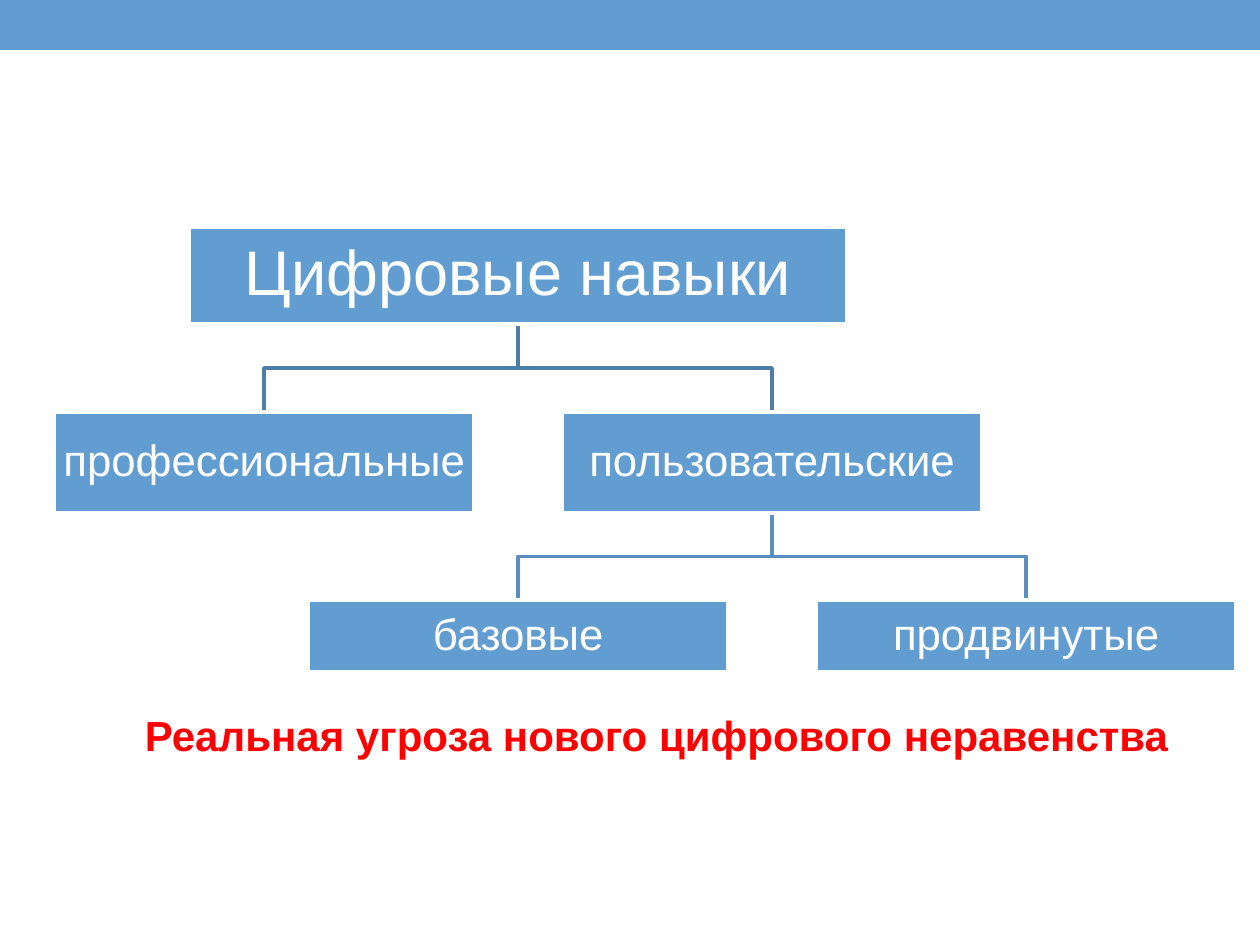
from dataclasses import dataclass

from lxml.etree import SubElement
from pptx import Presentation
from pptx.dml.color import RGBColor
from pptx.enum.shapes import MSO_SHAPE
from pptx.enum.text import MSO_ANCHOR, MSO_AUTO_SIZE, PP_ALIGN
from pptx.oxml.ns import qn
from pptx.util import Pt

# Content: the tree of skills, parents before children.
# (text, parent index, side of the parent)
SKILLS = [
    ("Цифровые навыки", None, 0),
    ("профессиональные", 0, -1),
    ("пользовательские", 0, 1),
    ("базовые", 2, -1),
    ("продвинутые", 2, 1),
]
WARNING = "Реальная угроза нового цифрового неравенства"

# Rows of the tree in px: top, box width, box height
LEVELS = [(227, 658, 97), (412, 420, 101), (600, 420, 72)]
ROOT_CENTER = 518
BRANCH_OFFSET = 254
SLIDE_WIDTH, SLIDE_HEIGHT = 1260, 945
BAR_HEIGHT = 50
WARNING_AREA = (115, 703, 1071, 63)
WARNING_INDENT = 30


@dataclass(frozen=True)
class Theme:
    font: str = "Arial"
    blue: RGBColor = RGBColor(0x62, 0x9D, 0xD1)
    white: RGBColor = RGBColor(0xFF, 0xFF, 0xFF)
    red: RGBColor = RGBColor(0xFF, 0x00, 0x00)
    branches: tuple = (RGBColor(0x4E, 0x7E, 0xA7), RGBColor(0x59, 0x8E, 0xBE))
    level_sizes: tuple = (36, 25, 25)
    level_insets: tuple = (4, 3, 3)
    warning_size: int = 24
    line_width: float = 2.08


THEME = Theme()


def px(length):
    return round(length * 914400 / 126)


def add_span(para, text, size, color, bold=False):
    span = para.add_run()
    span.text = text
    span.font.name = THEME.font
    span.font.size = Pt(size)
    span.font.bold = bold
    span.font.color.rgb = color


def add_rectangle(slide, left, top, width, height):
    box = slide.shapes.add_shape(
        MSO_SHAPE.RECTANGLE, px(left), px(top), px(width), px(height))
    box.shadow.inherit = False
    box.fill.solid()
    box.fill.fore_color.rgb = THEME.blue
    box.line.fill.background()
    return box


def add_skill_box(slide, text, center, level):
    top, width, height = LEVELS[level]
    box = add_rectangle(slide, center - width / 2, top, width, height)
    box.line.color.rgb = THEME.white
    box.line.width = Pt(THEME.line_width)
    frame = box.text_frame
    frame.word_wrap = True
    frame.vertical_anchor = MSO_ANCHOR.MIDDLE
    inset = px(THEME.level_insets[level])
    frame.margin_left = frame.margin_right = inset
    frame.margin_top = frame.margin_bottom = inset
    para = frame.paragraphs[0]
    para.alignment = PP_ALIGN.CENTER
    para.line_spacing = 0.9
    add_span(para, text, THEME.level_sizes[level], THEME.white)


def add_branch(slide, parent_center, child_center, child_level):
    """Draw an elbow from the parent's bottom to the child's top."""
    parent_top, _, parent_height = LEVELS[child_level - 1]
    start = parent_top + parent_height
    end = LEVELS[child_level][0]
    middle = (start + end) / 2
    builder = slide.shapes.build_freeform(px(parent_center), px(start))
    corners = [(parent_center, middle), (child_center, middle), (child_center, end)]
    builder.add_line_segments([(px(x), px(y)) for x, y in corners], close=False)
    branch = builder.convert_to_shape()
    branch.shadow.inherit = False
    branch.fill.background()
    branch.line.color.rgb = THEME.branches[child_level - 1]
    branch.line.width = Pt(THEME.line_width)
    SubElement(branch.line._get_or_add_ln(), qn("a:round"))


def place_skills():
    """Return (text, parent index, center, level) for each skill."""
    places = []
    for text, parent, side in SKILLS:
        if parent is None:
            places.append((text, parent, ROOT_CENTER, 0))
        else:
            _, _, center, level = places[parent]
            places.append((text, parent, center + side * BRANCH_OFFSET, level + 1))
    return places


def add_warning(slide):
    box = slide.shapes.add_textbox(*map(px, WARNING_AREA))
    frame = box.text_frame
    frame.word_wrap = True
    frame.auto_size = MSO_AUTO_SIZE.SHAPE_TO_FIT_TEXT
    frame.margin_left = px(WARNING_INDENT)
    add_span(frame.paragraphs[0], WARNING, THEME.warning_size, THEME.red, bold=True)


def main():
    deck = Presentation()
    deck.slide_width, deck.slide_height = px(SLIDE_WIDTH), px(SLIDE_HEIGHT)
    slide = deck.slides.add_slide(deck.slide_layouts[6])
    add_rectangle(slide, 0, 0, SLIDE_WIDTH, BAR_HEIGHT)
    places = place_skills()
    for _, parent, center, level in places:
        if parent is not None:
            add_branch(slide, places[parent][2], center, level)
    for text, _, center, level in places:
        add_skill_box(slide, text, center, level)
    add_warning(slide)
    deck.save("out.pptx")


if __name__ == "__main__":
    main()
